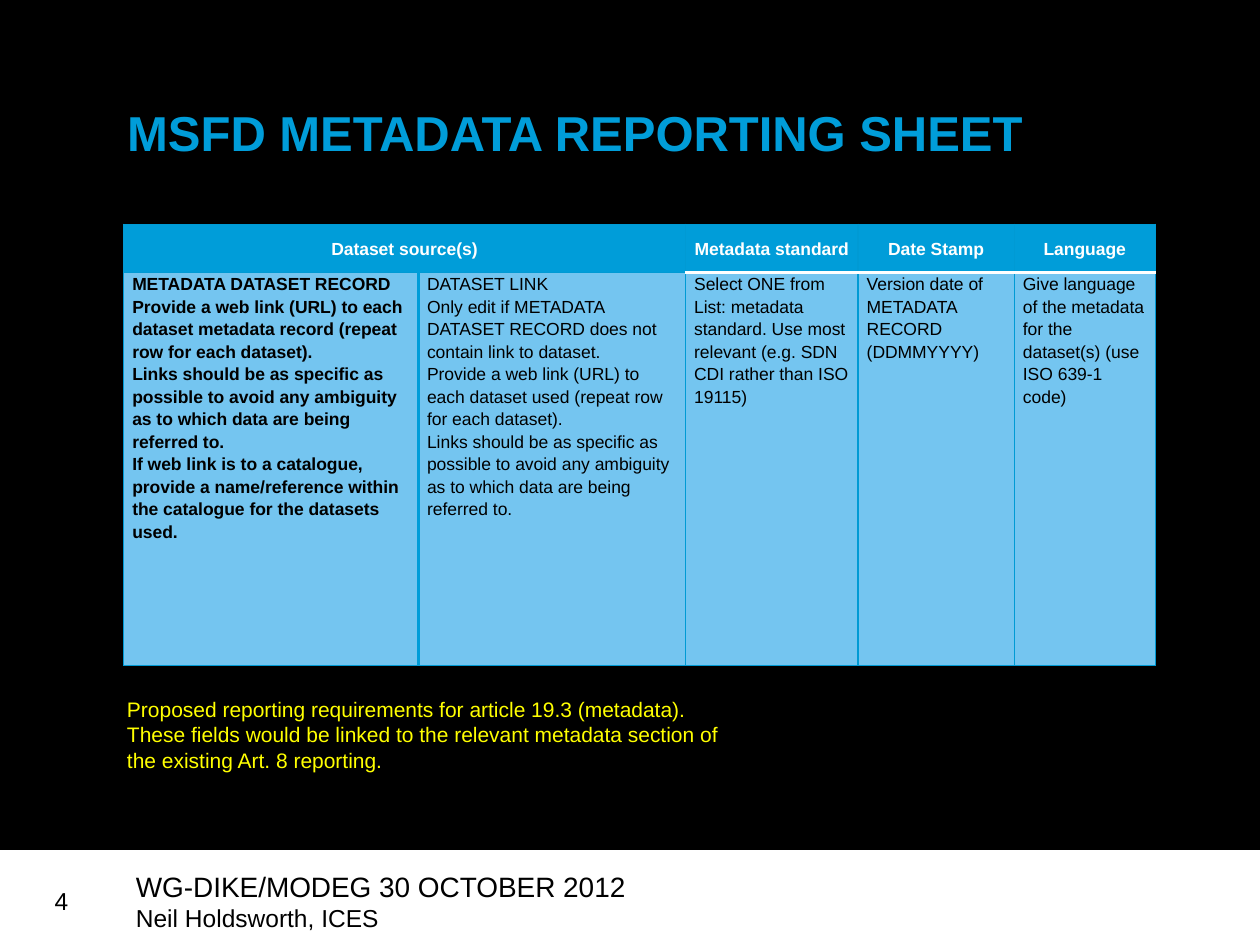
import pptx
import pptx.util
import pptx.dml.color
import pptx.enum.shapes
import pptx.enum.text
import pptx.oxml
from pptx.util import Inches

COLORS = {
    "black": "000000",
    "white": "FFFFFF",
    "yellow": "FFFF00",
    "blue": "009DD9",
    "border": "009AD4",
    "light": "74C5F0",
}
ALIGN = pptx.enum.text.PP_ALIGN
ANCHOR = pptx.enum.text.MSO_ANCHOR

COLUMN_WIDTHS = [2.34, 2.12, 1.37, 1.24, 1.12]
ROW_HEIGHTS = [0.38, 3.12]
HEADERS = ["Dataset source(s)", "", "Metadata standard", "Date Stamp", "Language"]
# A vertical tab is a line break within the paragraph
DETAILS = [
    "METADATA DATASET RECORD\v"
    "Provide a web link (URL) to each dataset metadata record (repeat row for each dataset).\v"
    "Links should be as specific as possible to avoid any ambiguity "
    "as to which data are being referred to.\v"
    "If web link is to a catalogue, provide a name/reference within "
    "the catalogue for the datasets used.",
    "DATASET LINK\v"
    "Only edit if METADATA DATASET RECORD does not contain link to dataset.\v"
    "Provide a web link (URL) to each dataset used (repeat row for each dataset).\v"
    "Links should be as specific as possible to avoid any ambiguity "
    "as to which data are being referred to.",
    "Select ONE from List: metadata standard. Use most relevant "
    "(e.g. SDN CDI rather than ISO 19115)",
    "Version date of METADATA RECORD (DDMMYYYY)",
    "Give language of the metadata for the dataset(s) (use ISO 639-1 code)",
]


def rgb(name):
    return pptx.dml.color.RGBColor.from_string(COLORS[name])


def style(para, size, color, bold=False, align=ALIGN.LEFT):
    para.alignment = align
    para.font.name = "Arial"
    para.font.size = pptx.util.Pt(size)
    para.font.bold = bold
    para.font.color.rgb = rgb(color)


def place(shape, box):
    shape.left, shape.top, shape.width, shape.height = [Inches(n) for n in box]


def add_background(page, box):
    panel = page.shapes.add_shape(
        pptx.enum.shapes.MSO_SHAPE.RECTANGLE, *[Inches(n) for n in box])
    panel.shadow.inherit = False
    panel.fill.solid()
    panel.fill.fore_color.rgb = rgb("black")
    panel.line.color.rgb = rgb("black")
    panel.line.width = pptx.util.Pt(0.75)


def add_title(page, box):
    title = page.shapes.title
    place(title, box)
    frame = title.text_frame
    frame.text = "MSFD METADATA REPORTING SHEET"
    frame.vertical_anchor = ANCHOR.TOP
    style(frame.paragraphs[0], 28, "blue", bold=True)


def add_text(page, box, lines, color, align=ALIGN.LEFT):
    """Add a text box holding one paragraph per (text, size) pair."""
    frame = page.shapes.add_textbox(*[Inches(n) for n in box]).text_frame
    frame.word_wrap = True
    for index, (text, size) in enumerate(lines):
        para = frame.add_paragraph() if index else frame.paragraphs[0]
        para.text = text
        style(para, size, color, align=align)


def set_borders(cell, edges):
    """Draw the four edges; fills must be set afterwards to keep XML order."""
    properties = cell._tc.get_or_add_tcPr()
    for side in "LRTB":
        color, width = edges.get(side, ("border", 0.75))
        properties.append(pptx.oxml.parse_xml(
            f'<a:ln{side} xmlns:a="http://schemas.openxmlformats.org/drawingml/2006/main" '
            f'w="{pptx.util.Pt(width)}"><a:solidFill><a:srgbClr val="{COLORS[color]}"/>'
            f'</a:solidFill></a:ln{side}>'))


def cell_edges(row, column):
    """Give the edges that differ from the thin blue border."""
    edges = {}
    if column >= 2:
        edges["B" if row == 0 else "T"] = ("white", 2)
    if row == 1 and column < 2:
        edges["R" if column == 0 else "L"] = ("blue", 2)
    return edges


def add_metadata_table(page, box):
    table = page.shapes.add_table(
        len(ROW_HEIGHTS), len(COLUMN_WIDTHS), *[Inches(n) for n in box]).table
    table.first_row = table.horz_banding = False
    for column, width in zip(table.columns, COLUMN_WIDTHS):
        column.width = Inches(width)
    for row, height in zip(table.rows, ROW_HEIGHTS):
        row.height = Inches(height)

    for row, texts in enumerate([HEADERS, DETAILS]):
        header = row == 0
        for column, text in enumerate(texts):
            cell = table.cell(row, column)
            cell.margin_left = cell.margin_right = Inches(0.07)
            cell.margin_top = cell.margin_bottom = 0
            cell.vertical_anchor = ANCHOR.MIDDLE if header else ANCHOR.TOP
            set_borders(cell, cell_edges(row, column))
            cell.fill.solid()
            cell.fill.fore_color.rgb = rgb("blue" if header else "light")
            cell.text = text
            para = cell.text_frame.paragraphs[0]
            para.line_spacing = 1.15
            style(para, 10, "white" if header else "black",
                  bold=header or column == 0,
                  align=ALIGN.CENTER if header else ALIGN.LEFT)
    table.cell(0, 0).merge(table.cell(0, 1))


def main():
    deck = pptx.Presentation()
    deck.slide_width, deck.slide_height = Inches(10), Inches(7.5)
    page = deck.slides.add_slide(deck.slide_layouts.get_by_name("Title Only"))

    # Dark panel, sent behind the title
    add_background(page, (0, 0, 10, 6.74))
    title_element = page.shapes.title._element
    title_element.getparent().append(title_element)

    # Title, table and note
    add_title(page, (0.91, 0.76, 8.27, 0.94))
    add_metadata_table(page, (0.98, 1.78, 8.19, 3.5))
    add_text(page, (0.91, 5.48, 4.96, 0.71), [(
        "Proposed reporting requirements for article 19.3 (metadata). "
        "These fields would be linked to the relevant metadata section "
        "of the existing Art. 8 reporting.", 12)], "yellow")

    # Footer
    add_text(page, (0.12, 6.98, 0.52, 0.33), [("4", 14)], "black", ALIGN.RIGHT)
    add_text(page, (0.98, 6.85, 5.91, 0.52), [
        ("WG-DIKE/MODEG 30 OCTOBER 2012", 16),
        ("Neil Holdsworth, ICES", 14)], "black")

    deck.save("out.pptx")


if __name__ == "__main__":
    main()
